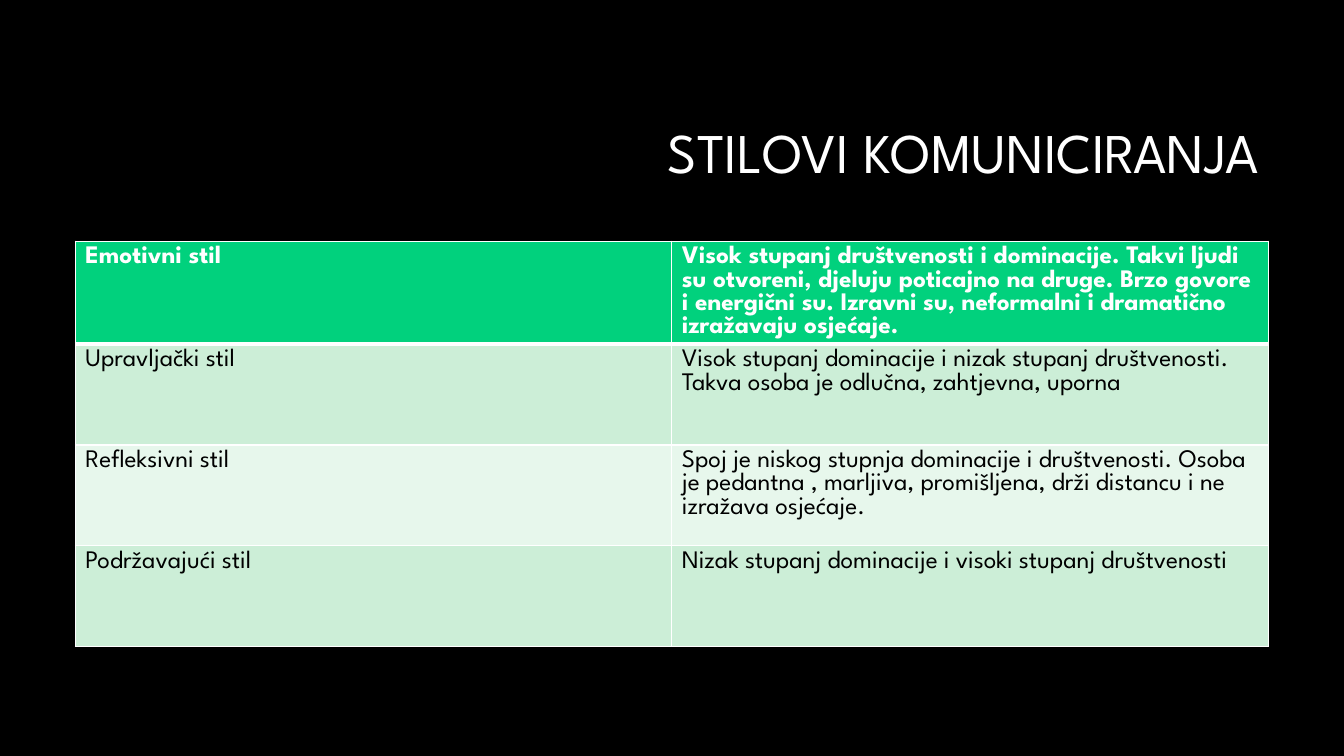
import pptx
import pptx.util
import pptx.dml.color
import pptx.enum.text
import pptx.oxml
import pptx.oxml.ns

Cm = pptx.util.Cm
Pt = pptx.util.Pt

STYLES = [
    ("Emotivni stil",
     "Visok stupanj društvenosti i dominacije. Takvi ljudi su otvoreni, djeluju poticajno na druge. "
     "Brzo govore i energični su. Izravni su, neformalni i dramatično izražavaju osjećaje."),
    ("Upravljački stil",
     "Visok stupanj dominacije i nizak stupanj društvenosti.\n"
     "Takva osoba je odlučna, zahtjevna, uporna"),
    ("Refleksivni stil",
     "Spoj je niskog stupnja dominacije i društvenosti. Osoba je pedantna , marljiva, promišljena, "
     "drži distancu i ne izražava osjećaje."),
    ("Podržavajući stil",
     "Nizak stupanj dominacije i visoki stupanj društvenosti"),
]


def paint(target, color):
    if hasattr(target, "solid"):
        target.solid()
        target = target.fore_color
    target.rgb = pptx.dml.color.RGBColor.from_string(color)


class Deck:
    """Holds the style and the current slide, and adds elements to it."""

    face = "League Spartan"
    back, white, green = "000000", "FFFFFF", "01D17D"
    bands = ("E7F7EC", "CCEED7")

    def __init__(self):
        self.show = pptx.Presentation()
        self.show.slide_width, self.show.slide_height = Cm(33.87), Cm(19.05)
        self.slide = self.show.slides.add_slide(self.show.slide_layouts[5])
        paint(self.slide.background.fill, self.back)

    def label(self, frame, text, color, look, form):
        frame.text = text
        for para in frame.paragraphs:
            for key, value in form.items():
                setattr(para, key, value)
            for run in para.runs:
                for key, value in {"name": self.face, **look}.items():
                    setattr(run.font, key, value)
                paint(run.font.color, color)

    def title(self, text, left, top, width, height):
        shape = self.slide.shapes.title
        place = {"left": left, "top": top, "width": width, "height": height}
        for key, value in place.items():
            setattr(shape, key, Cm(value))
        frame = shape.text_frame
        frame.word_wrap = True
        frame.vertical_anchor = pptx.enum.text.MSO_ANCHOR.MIDDLE
        self.label(frame, text, self.white, {"size": Pt(40)},
                   {"alignment": pptx.enum.text.PP_ALIGN.RIGHT, "line_spacing": 0.9})

    def border(self, cell, sides):
        props = cell._tc.get_or_add_tcPr()
        for side, width in sides.items():
            props.append(pptx.oxml.parse_xml(
                f'<a:ln{side} {pptx.oxml.ns.nsdecls("a")} w="{Pt(width)}"><a:solidFill>'
                f'<a:srgbClr val="{self.white}"/></a:solidFill></a:ln{side}>'))

    def table(self, data, left, top, wide, high):
        rows, cols = len(data), len(data[0])
        grid = self.slide.shapes.add_table(
            rows, cols, Cm(left), Cm(top), Cm(wide * cols), Cm(high * rows)).table
        for r, line in enumerate(data):
            head = r == 0
            for c, text in enumerate(line):
                cell = grid.cell(r, c)
                self.border(cell, {"L": 1, "R": 1, "T": 3 if r == 1 else 1, "B": 3 if head else 1})
                paint(cell.fill, self.green if head else self.bands[r % 2])
                self.label(cell.text_frame, text, self.white if head else self.back,
                           {"size": Pt(18), "bold": head}, {})


def main():
    deck = Deck()
    deck.title("STILOVI KOMUNICIRANJA", 8.05, 2.13, 23.93, 3.58)
    deck.table(STYLES, 1.9, 6.08, 15.03, 2.54)
    deck.show.save("out.pptx")


if __name__ == "__main__":
    main()
